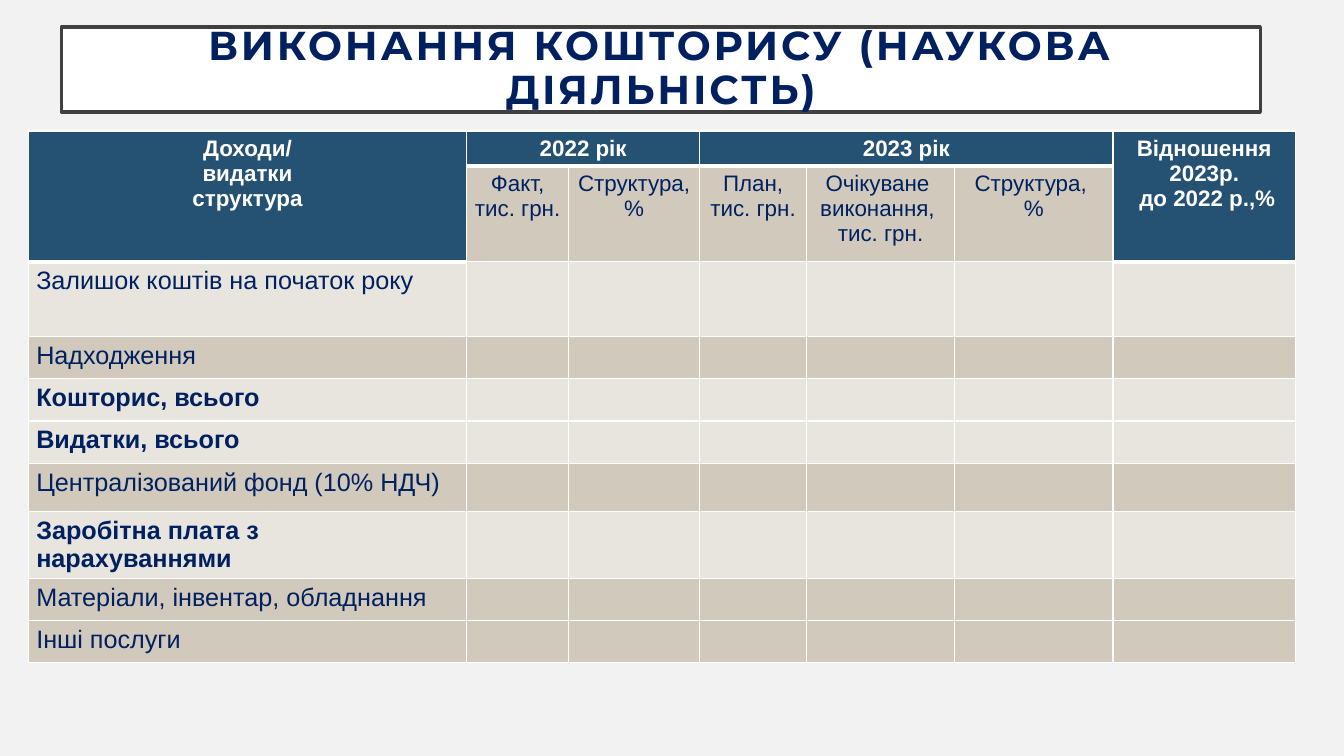
from dataclasses import dataclass

from pptx import Presentation
from pptx.dml.color import RGBColor
from pptx.enum.text import MSO_ANCHOR, MSO_AUTO_SIZE, PP_ALIGN
from pptx.oxml import parse_xml
from pptx.oxml.ns import nsdecls
from pptx.util import Inches, Pt


@dataclass
class Theme:
    background: str = "F2F2F2"
    white: str = "FFFFFF"
    frame: str = "404040"
    ink: str = "002060"
    header: str = "255272"
    dark_band: str = "D1CABC"
    light_band: str = "E8E5DE"
    title_font: str = "Montserrat"
    body_font: str = "Arial"
    title_size: float = 28.8
    header_size: int = 16
    body_size: int = 18
    thin: int = 1
    thick: int = 3


COLUMN_WIDTHS = [4.35, 1.01, 1.3, 1.06, 1.47, 1.57, 1.81]
HEADER_HEIGHTS = [0.34, 0.95]

# Header text by (row, column), with the last cell of the merged range
HEADER_CELLS = [
    ((0, 0), (1, 0), "Доходи/\nвидатки\nструктура"),
    ((0, 1), (0, 2), "2022 рік"),
    ((0, 3), (0, 5), "2023 рік"),
    ((0, 6), (1, 6), "Відношення 2023р.\n до 2022 р.,%"),
]
SUBHEADERS = ["Факт,\nтис. грн.", "Структура, %", "План, тис. грн.",
              "Очікуване \nвиконання, \nтис. грн.", "Структура, \n%"]

# Label, row height, bold, light band
BUDGET_ROWS = [
    ("Залишок коштів на початок року", 0.74, False, True),
    ("Надходження", 0.42, False, False),
    ("Кошторис, всього", 0.42, True, True),
    ("Видатки, всього", 0.42, True, True),
    ("Централізований фонд (10% НДЧ)", 0.48, False, False),
    ("Заробітна плата з нарахуваннями", 0.65, True, True),
    ("Матеріали, інвентар, обладнання", 0.42, False, False),
    ("Інші послуги", 0.42, False, False),
]


class BudgetSlide:
    def __init__(self, deck, theme):
        self.theme = theme
        self.slide = deck.slides.add_slide(deck.slide_layouts[5])
        fill = self.slide.background.fill
        fill.solid()
        fill.fore_color.rgb = RGBColor.from_string(theme.background)

    def format_text(self, text_frame, font, size, color, bold, align):
        for para in text_frame.paragraphs:
            para.alignment = align
            for span in para.runs:
                span.font.name = font
                span.font.size = Pt(size)
                span.font.bold = bold
                span.font.color.rgb = RGBColor.from_string(color)

    def add_title(self, text, left, top, width, height):
        theme = self.theme
        box = self.slide.shapes.title
        box.left, box.top = Inches(left), Inches(top)
        box.width, box.height = Inches(width), Inches(height)
        box.fill.solid()
        box.fill.fore_color.rgb = RGBColor.from_string(theme.white)
        box.line.color.rgb = RGBColor.from_string(theme.frame)
        box.line.width = Pt(2.5)
        frame = box.text_frame
        frame.text = text
        frame.word_wrap = True
        frame.auto_size = MSO_AUTO_SIZE.NONE
        frame.vertical_anchor = MSO_ANCHOR.MIDDLE
        frame.margin_left = frame.margin_right = Inches(0.2)
        frame.margin_top = frame.margin_bottom = Inches(0.2)
        self.format_text(frame, theme.title_font, theme.title_size, theme.ink,
                         True, PP_ALIGN.CENTER)
        para = frame.paragraphs[0]
        para.line_spacing = 0.9
        para.runs[0].font._element.set("spc", "200")

    def style_cell(self, cell, fill, top, bottom):
        theme = self.theme
        borders = {"L": theme.thin, "R": theme.thin, "T": top, "B": bottom}
        properties = cell._tc.get_or_add_tcPr()
        for side, width in borders.items():
            properties.append(parse_xml(
                f'<a:ln{side} {nsdecls("a")} w="{Pt(width)}"><a:solidFill>'
                f'<a:srgbClr val="{theme.white}"/></a:solidFill></a:ln{side}>'))
        cell.fill.solid()
        cell.fill.fore_color.rgb = RGBColor.from_string(fill)
        cell.margin_left = cell.margin_right = Inches(0.08)
        cell.margin_top = cell.margin_bottom = Inches(0.05)

    def write_cell(self, cell, text, size, color, bold, align):
        cell.text_frame.text = text
        self.format_text(cell.text_frame, self.theme.body_font, size, color,
                         bold, align)

    def add_budget_table(self, left, top):
        theme = self.theme
        heights = HEADER_HEIGHTS + [height for _, height, _, _ in BUDGET_ROWS]
        last = len(COLUMN_WIDTHS) - 1
        table = self.slide.shapes.add_table(
            len(heights), len(COLUMN_WIDTHS), Inches(left), Inches(top),
            Inches(sum(COLUMN_WIDTHS)), Inches(sum(heights))).table
        for column, width in zip(table.columns, COLUMN_WIDTHS):
            column.width = Inches(width)
        for row, height in zip(table.rows, heights):
            row.height = Inches(height)

        # Fills and borders: a thick rule closes each header cell
        def is_header(row, column):
            return row == 0 or (row == 1 and column in (0, last))

        for row in range(len(heights)):
            for column in range(last + 1):
                if is_header(row, column):
                    fill = theme.header
                elif row >= 2 and BUDGET_ROWS[row - 2][3]:
                    fill = theme.light_band
                else:
                    fill = theme.dark_band
                above = row > 0 and is_header(row - 1, column)
                self.style_cell(
                    table.cell(row, column), fill,
                    theme.thick if above else theme.thin,
                    theme.thick if is_header(row, column) else theme.thin)

        # Header rows
        for start, end, text in HEADER_CELLS:
            cell = table.cell(*start)
            cell.merge(table.cell(*end))
            self.write_cell(cell, text, theme.header_size, theme.white, True,
                            PP_ALIGN.CENTER)
        for column, text in enumerate(SUBHEADERS, start=1):
            self.write_cell(table.cell(1, column), text, theme.header_size,
                            theme.ink, False, PP_ALIGN.CENTER)

        # Budget lines
        for row, (label, _, bold, _) in enumerate(BUDGET_ROWS, start=2):
            self.write_cell(table.cell(row, 0), label, theme.body_size,
                            theme.ink, bold, PP_ALIGN.LEFT)


def main():
    deck = Presentation()
    deck.slide_width, deck.slide_height = Inches(13.33), Inches(7.5)
    page = BudgetSlide(deck, Theme())
    page.add_title("ВИКОНАННЯ КОШТОРИСУ (НАУКОВА ДІЯЛЬНІСТЬ)",
                   0.61, 0.27, 11.89, 0.84)
    page.add_budget_table(0.28, 1.3)
    deck.save("out.pptx")


if __name__ == "__main__":
    main()
